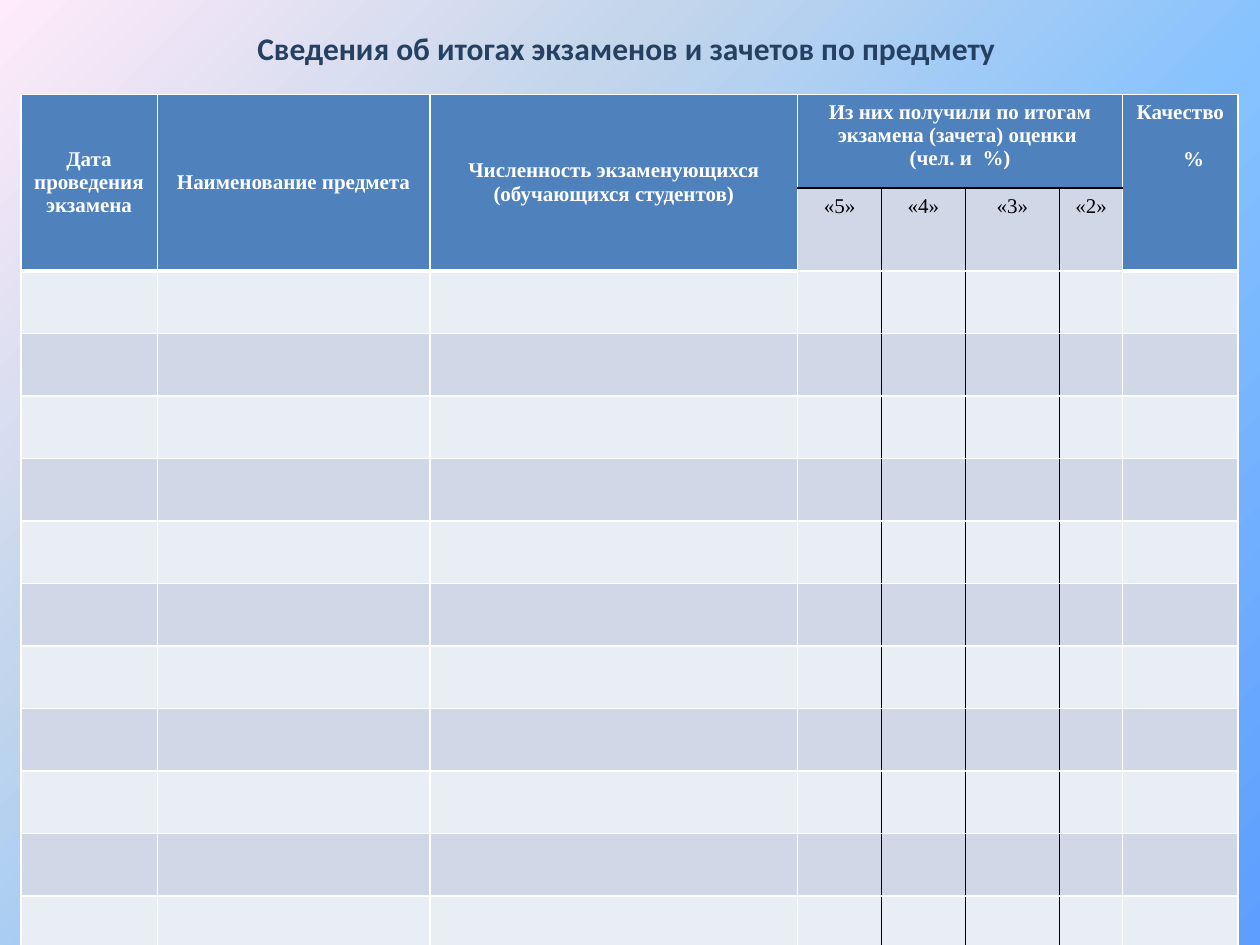
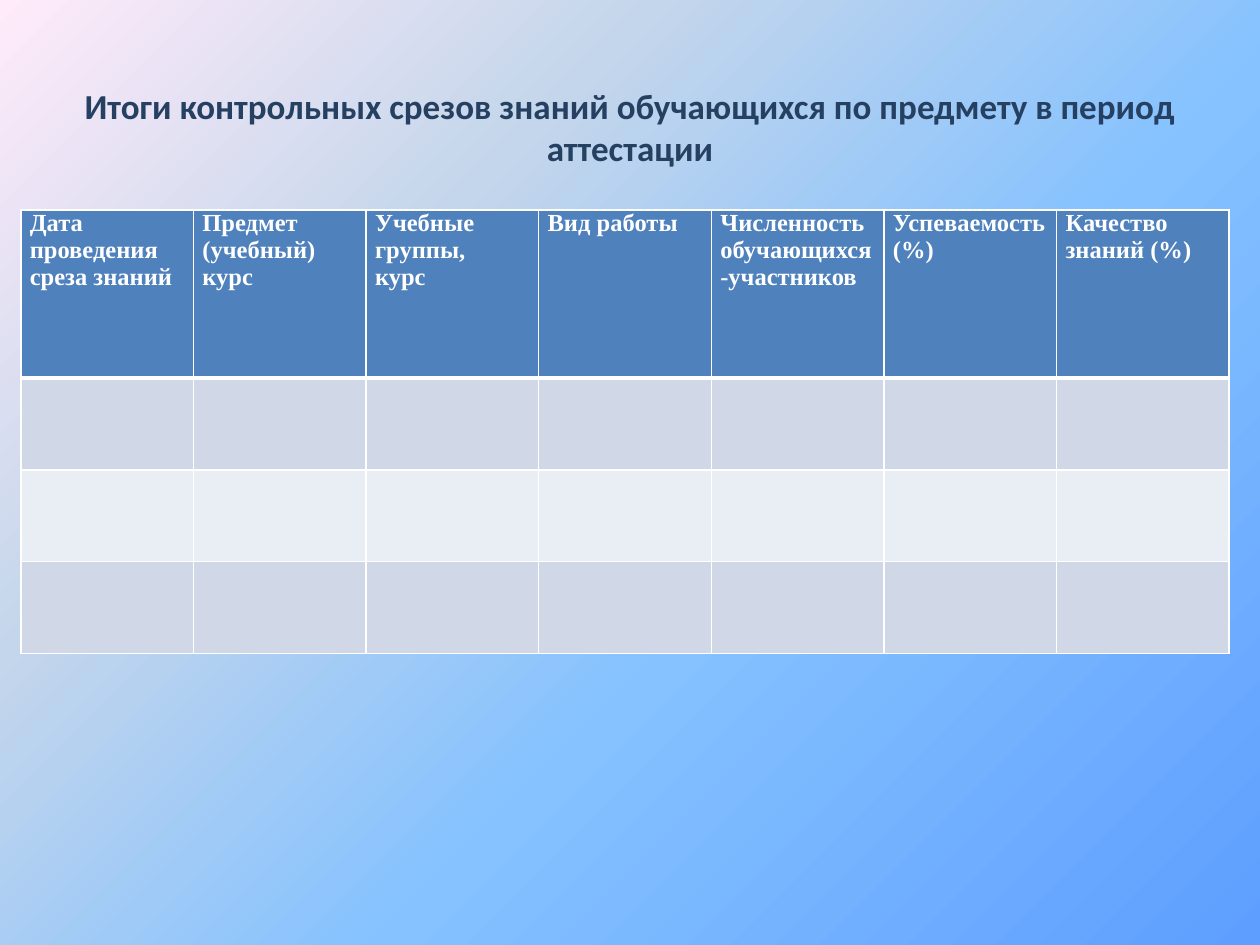
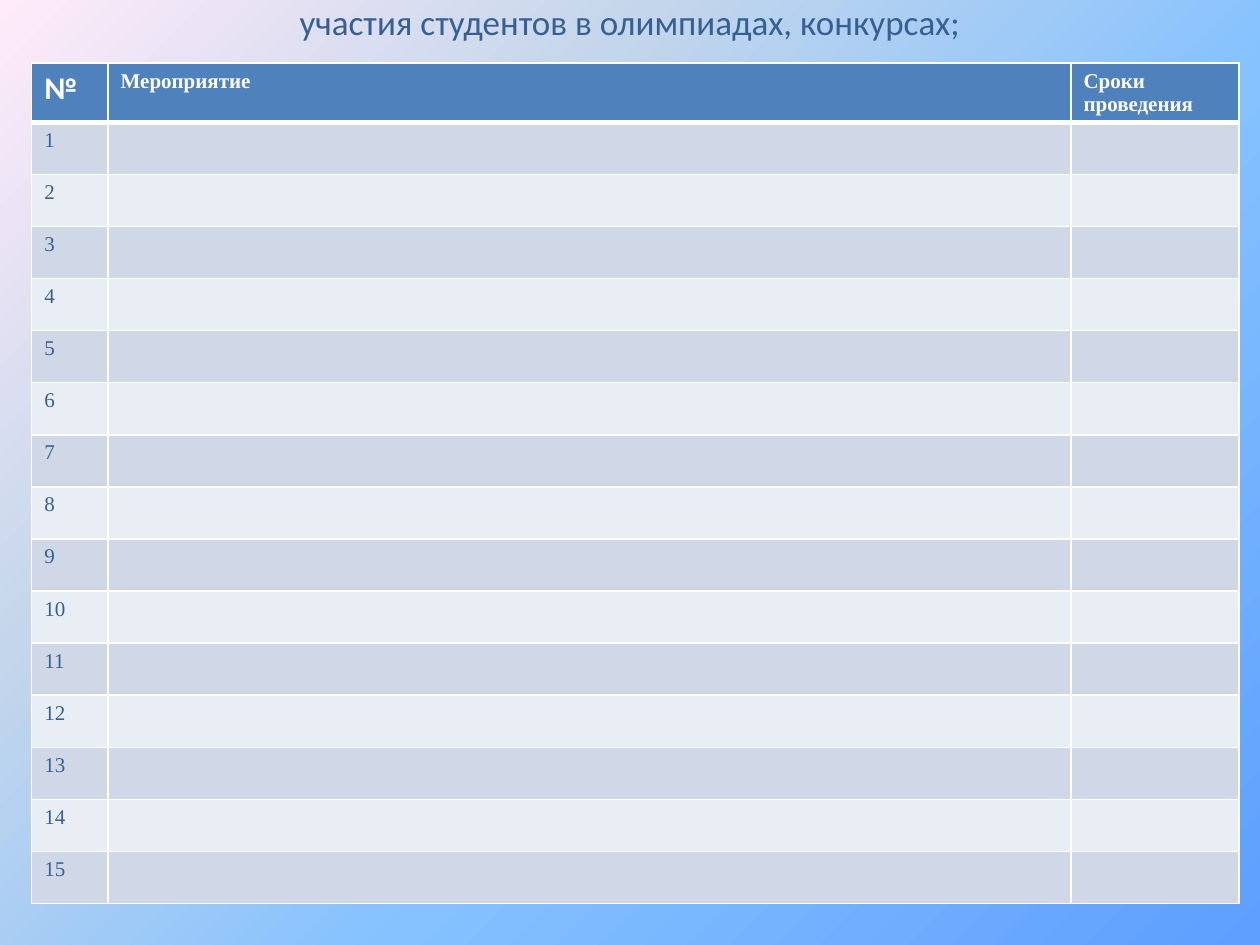
from lxml import etree
from pptx import Presentation
from pptx.dml.color import RGBColor
from pptx.enum.text import MSO_ANCHOR, PP_ALIGN
from pptx.oxml.ns import qn
from pptx.util import Cm, Pt

LEFT, CENTER, JUSTIFY = PP_ALIGN.LEFT, PP_ALIGN.CENTER, PP_ALIGN.JUSTIFY
TOP, MIDDLE = MSO_ANCHOR.TOP, MSO_ANCHOR.MIDDLE

WHITE = RGBColor(0xFF, 0xFF, 0xFF)
BLACK = RGBColor(0x00, 0x00, 0x00)
NAVY = RGBColor(0x25, 0x40, 0x61)
STEEL = RGBColor(0x37, 0x60, 0x92)
HEAD = RGBColor(0x4F, 0x81, 0xBD)
DARK = RGBColor(0xD0, 0xD8, 0xE8)
PALE = RGBColor(0xE9, 0xED, 0xF4)
SKY = [
    (0, RGBColor(0x5E, 0x9E, 0xFF)),
    (40, RGBColor(0x85, 0xC2, 0xFF)),
    (70, RGBColor(0xC4, 0xD6, 0xEB)),
    (100, RGBColor(0xFF, 0xEB, 0xFA)),
]
SANS, SERIF = "Calibri", "Times New Roman"


class Deck:
    def __init__(self):
        self.prs = Presentation()
        self.prs.slide_width = Cm(25.4)
        self.prs.slide_height = Cm(19.05)
        self.paint()

    def paint(self):
        master = self.prs.slide_master
        fill = master.background.fill
        fill.gradient()
        fill.gradient_angle = 135
        stops = next(master.element.iter(qn("a:gsLst")))
        for stop in list(stops):
            stops.remove(stop)
        for place, color in SKY:
            stop = etree.SubElement(stops, qn("a:gs"), pos=str(place * 1000))
            etree.SubElement(stop, qn("a:srgbClr"), val=str(color))

    def page(self):
        layout = self.prs.slide_layouts[5]
        self.slide = self.prs.slides.add_slide(layout)

    def label(self, frame, text, size, color, bold=True, font=SERIF, align=LEFT):
        frame.text = text
        for para in frame.paragraphs:
            para.alignment = align
            for run in para.runs:
                run.font.name = font
                run.font.size = Pt(size)
                run.font.bold = bold
                run.font.color.rgb = color

    def title(self, text, top, height, size, color=NAVY, bold=True):
        shape = self.slide.shapes.title
        shape.left, shape.top = Cm(1.27), Cm(top)
        shape.width, shape.height = Cm(22.86), Cm(height)
        shape.text_frame.vertical_anchor = MIDDLE
        self.label(shape.text_frame, text, size, color, bold, SANS, CENTER)

    def grid(self, left, top, cols, rows):
        frame = self.slide.shapes.add_table(
            len(rows), len(cols), Cm(left), Cm(top), Cm(sum(cols)), Cm(sum(rows)))
        self.table = frame.table
        self.table.first_row = self.table.horz_banding = False
        for col, width in zip(self.table.columns, cols):
            col.width = Cm(width)
        for row, height in zip(self.table.rows, rows):
            row.height = Cm(height)
        for row in range(len(rows)):
            for col in range(len(cols)):
                cell = self.table.cell(row, col)
                self.frame(cell)
                self.tint(cell, HEAD if row == 0 else DARK if row % 2 else PALE)

    def frame(self, cell):
        props = cell._tc.get_or_add_tcPr()
        for side in "LRTB":
            line = etree.SubElement(props, qn("a:ln" + side), w=str(Pt(1)))
            solid = etree.SubElement(line, qn("a:solidFill"))
            etree.SubElement(solid, qn("a:srgbClr"), val=str(WHITE))

    def tint(self, cell, color):
        cell.fill.solid()
        cell.fill.fore_color.rgb = color

    def edge(self, row, col, side, color=WHITE, width=1):
        drop, step, other = {"B": (1, 0, "T"), "R": (0, 1, "L")}[side]
        for cell, mark in ((self.table.cell(row, col), side),
                           (self.table.cell(row + drop, col + step), other)):
            line = cell._tc.tcPr.find(qn("a:ln" + mark))
            line.set("w", str(Pt(width)))
            next(line.iter(qn("a:srgbClr"))).set("val", str(color))

    def cell(self, row, col, text, size=12, color=WHITE, anchor=TOP,
             tight=False, **style):
        cell = self.table.cell(row, col)
        cell.vertical_anchor = anchor
        if tight:
            cell.margin_left = cell.margin_right = Cm(0.18)
            cell.margin_top = cell.margin_bottom = 0
        self.label(cell.text_frame, text, size, color, **style)
        return cell


def exams(deck):
    deck.page()
    deck.title("Сведения об итогах экзаменов и зачетов по предмету ", 0.43, 1.07, 18)
    rows = [1.89, 1.66] + [1.26] * 11
    deck.grid(0.42, 1.9, [2.75, 5.5, 7.41, 1.69, 1.69, 1.9, 1.27, 2.33], rows)
    table = deck.table
    for col in (0, 1, 2, 7):
        deck.tint(table.cell(1, col), HEAD)
        deck.edge(1, col, "B", width=3)
        table.cell(0, col).merge(table.cell(1, col))
    for col in range(3, 7):
        deck.edge(0, col, "B", BLACK)
    for row in range(1, len(rows)):
        for col in range(3, 6):
            deck.edge(row, col, "R", BLACK)
    table.cell(0, 3).merge(table.cell(0, 6))

    heads = ["Дата проведения экзамена", "Наименование предмета",
             "Численность экзаменующихся (обучающихся студентов)"]
    for col, text in enumerate(heads):
        deck.cell(0, col, text, anchor=MIDDLE, tight=True, align=CENTER)
    deck.cell(0, 3, "Из них получили по итогам экзамена (зачета) оценки \n(чел. и  %)",
              align=CENTER)
    share = deck.cell(0, 7, "Качество\n%", align=CENTER).text_frame.paragraphs[1]
    share.space_before = Pt(13.5)
    share._p.get_or_add_pPr().set("marL", str(Cm(0.53)))
    for col, mark in enumerate("5432", 3):
        deck.cell(1, col, f"«{mark}»", color=BLACK, bold=False, align=CENTER)


def tests(deck):
    deck.page()
    deck.title("Итоги контрольных срезов знаний обучающихся по предмету "
               "в период аттестации", 1.48, 2.12, 20)
    heads = ["Дата проведения среза знаний", "Предмет (учебный) курс",
             "Учебные группы, \nкурс", "Вид работы",
             "Численность обучающихся-участников", "Успеваемость (%)",
             "Качество знаний (%)"]
    deck.grid(0.42, 4.23, [3.48] * len(heads), [3.39] + [1.85] * 3)
    for col, text in enumerate(heads):
        deck.edge(0, col, "B", width=3)
        deck.cell(0, col, text, 14, tight=True, align=JUSTIFY)


def events(deck):
    deck.page()
    deck.title("участия студентов в олимпиадах, конкурсах;", -0.42, 1.69, 20,
               STEEL, False)
    count = 15
    deck.grid(0.64, 1.27, [1.54, 19.41, 3.39], [1.19] + [1.05] * count)
    heads = [("№", 18, SANS), ("Мероприятие", 12, SERIF),
             ("Сроки проведения", 12, SERIF)]
    for col, (text, size, font) in enumerate(heads):
        deck.edge(0, col, "B", width=3)
        deck.cell(0, col, text, size, font=font)
    for row in range(1, count + 1):
        deck.cell(row, 0, str(row), color=STEEL, bold=False)


def main():
    deck = Deck()
    exams(deck)
    tests(deck)
    events(deck)
    deck.prs.save("out.pptx")


if __name__ == "__main__":
    main()
